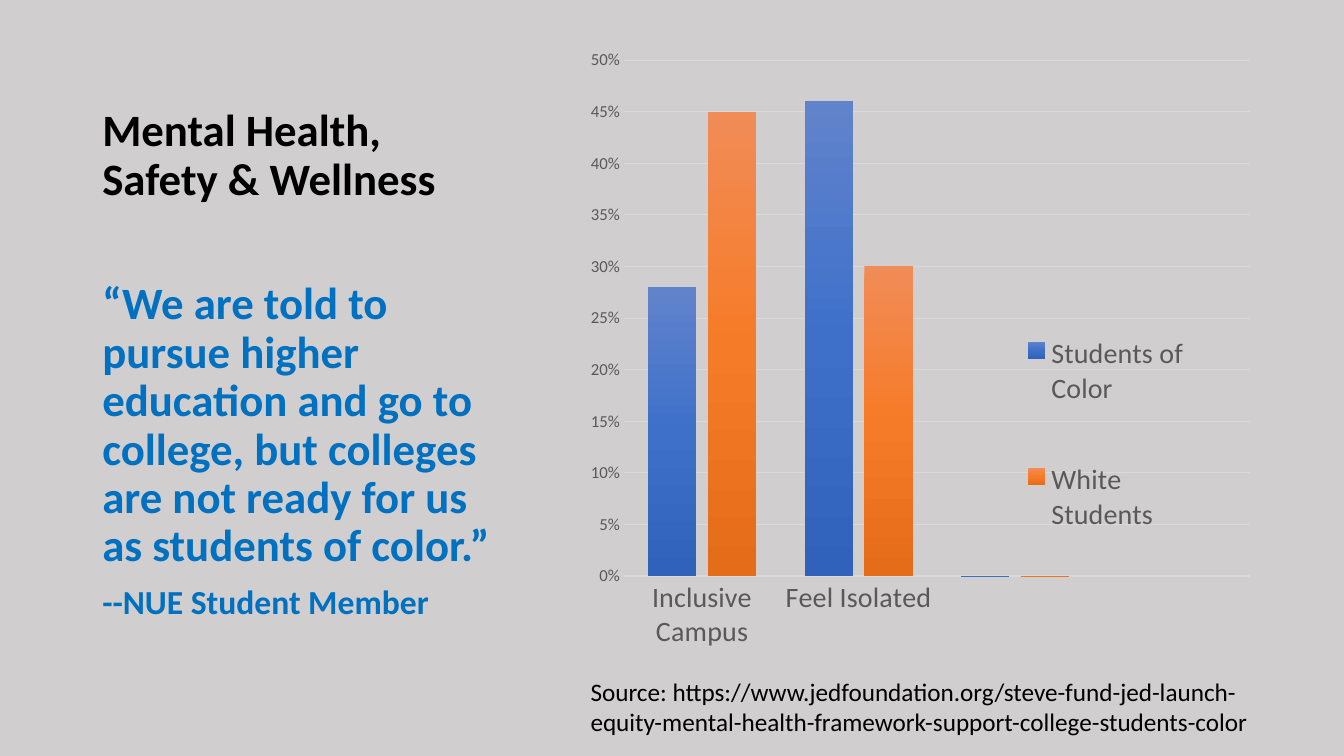
from dataclasses import dataclass

import pptx
import pptx.chart.data
import pptx.dml.color
import pptx.enum.chart
import pptx.enum.text
import pptx.oxml
import pptx.oxml.ns
import pptx.util
from pptx.util import Pt


@dataclass(frozen=True)
class Theme:
    font: str = "Calibri"
    background: str = "D0CECE"
    ink: str = "000000"
    quote: str = "0070C0"
    label: str = "595959"
    grid: str = "D9D9D9"
    blue: tuple = ("6183CB", "3E70CA", "3062BB")
    orange: tuple = ("F18C57", "F67B28", "E56C19")
    heading_size: int = 32
    member_size: int = 24
    label_size: int = 20
    source_size: int = 18
    scale_size: int = 12


THEME = Theme()


def rgb(color):
    return pptx.dml.color.RGBColor.from_string(color)


def style_font(font, size, color, bold=False):
    font.name = THEME.font
    font.size = Pt(size)
    font.bold = bold
    font.color.rgb = rgb(color)


def add_text(slide, box, paragraphs, color, bold=False, line_spacing=1.0, anchor="TOP"):
    """Each paragraph is (lines, size); its lines are parted by line breaks."""
    frame = slide.shapes.add_textbox(*map(Pt, box)).text_frame
    frame.word_wrap = True
    frame.vertical_anchor = getattr(pptx.enum.text.MSO_ANCHOR, anchor)
    for index, (lines, size) in enumerate(paragraphs):
        paragraph = frame.add_paragraph() if index else frame.paragraphs[0]
        paragraph.line_spacing = line_spacing
        paragraph.space_before = Pt(10 if index else 0)
        for number, line in enumerate(lines):
            if number:
                paragraph.add_line_break()
            run = paragraph.add_run()
            run.text = line
            style_font(run.font, size, color, bold)


def chart_xml(body):
    return pptx.oxml.parse_xml(body.replace(">", f' {pptx.oxml.ns.nsdecls("c", "a")}>', 1))


def set_layout(part, index, fractions, target=""):
    """Place a chart part by its x, y, width and height as fractions of the chart."""
    for old in part.findall(pptx.oxml.ns.qn("c:layout")):
        part.remove(old)
    modes = '<c:xMode val="edge"/><c:yMode val="edge"/>'
    sizes = "".join(f'<c:{key} val="{value}"/>' for key, value in zip("xywh", fractions))
    part.insert(index, chart_xml(
        f"<c:layout><c:manualLayout>{target}{modes}{sizes}</c:manualLayout></c:layout>"))


def fill_gradient(series, colors):
    stops = "".join(f'<a:gs pos="{position}"><a:srgbClr val="{color}"/></a:gs>'
                    for position, color in zip((0, 50000, 100000), colors))
    series.format.fill.background()
    properties = series._element.get_or_add_spPr()
    properties.replace(properties[0], chart_xml(
        f'<a:gradFill><a:gsLst>{stops}</a:gsLst><a:lin ang="5400000" scaled="0"/></a:gradFill>'))


def style_axes(chart):
    categories, scale = chart.category_axis, chart.value_axis
    for axis, size in ((categories, THEME.label_size), (scale, THEME.scale_size)):
        axis.major_tick_mark = axis.minor_tick_mark = pptx.enum.chart.XL_TICK_MARK.NONE
        style_font(axis.tick_labels.font, size, THEME.label)
    categories.format.line.color.rgb = rgb(THEME.grid)
    categories.format.line.width = Pt(1)
    scale.format.line.fill.background()
    scale.minimum_scale, scale.maximum_scale, scale.major_unit = 0, 0.5, 0.05
    scale.tick_labels.number_format = "0%"
    scale.tick_labels.number_format_is_linked = False
    scale.major_gridlines.format.line.color.rgb = rgb(THEME.grid)
    scale.major_gridlines.format.line.width = Pt(0.75)


def add_wellness_chart(slide, box):
    survey = pptx.chart.data.CategoryChartData(number_format="0%")
    survey.categories = ["Inclusive Campus", "Feel Isolated", "", ""]
    survey.add_series("Students of Color", (0.28, 0.46, 0, None))
    survey.add_series("White Students", (0.45, 0.3, 0, None))
    chart = slide.shapes.add_chart(
        pptx.enum.chart.XL_CHART_TYPE.COLUMN_CLUSTERED, *map(Pt, box), survey).chart
    style_font(chart.font, 10, THEME.ink)
    chart.has_title = False
    style_axes(chart)

    bars = chart.plots[0]
    bars.gap_width, bars.overlap, bars.vary_by_categories = 100, -24, False
    for series, colors in zip(bars.series, (THEME.blue, THEME.orange)):
        fill_gradient(series, colors)

    chart.has_legend = True
    chart.legend.position = pptx.enum.chart.XL_LEGEND_POSITION.BOTTOM
    chart.legend.include_in_layout = False
    style_font(chart.legend.font, THEME.label_size, THEME.label)
    set_layout(chart.legend._element, 1, (0.63, 0.38, 0.27, 0.48))
    plot_area = bars._element.getparent()
    set_layout(plot_area, 0, (0.08, 0.04, 0.89, 0.8), '<c:layoutTarget val="inner"/>')


def main():
    deck = pptx.Presentation()
    deck.slide_width, deck.slide_height = Pt(960), Pt(540)
    slide = deck.slides.add_slide(deck.slide_layouts[6])
    slide.background.fill.solid()
    slide.background.fill.fore_color.rgb = rgb(THEME.background)

    title = ("Mental Health, ", "Safety & Wellness")
    quote = ("“We are told to pursue higher education and go to college, "
             "but colleges are not ready for us as students of color.”",)
    member = ("--NUE Student Member",)
    source = ("Source: https://www.jedfoundation.org/steve-fund-jed-launch-"
              "equity-mental-health-framework-support-college-students-color",)

    add_text(slide, (66, 14.4, 310, 135.4), [(title, THEME.heading_size)],
             THEME.ink, bold=True, line_spacing=0.9, anchor="BOTTOM")
    add_text(slide, (66, 197.3, 310, 264),
             [(quote, THEME.heading_size), (member, THEME.member_size)],
             THEME.quote, bold=True, line_spacing=0.9)
    add_wellness_chart(slide, (405.4, 24.5, 502.6, 460.8))
    add_text(slide, (414.7, 479.5, 502.6, 51), [(source, THEME.source_size)], THEME.ink)
    deck.save("out.pptx")


if __name__ == "__main__":
    main()
